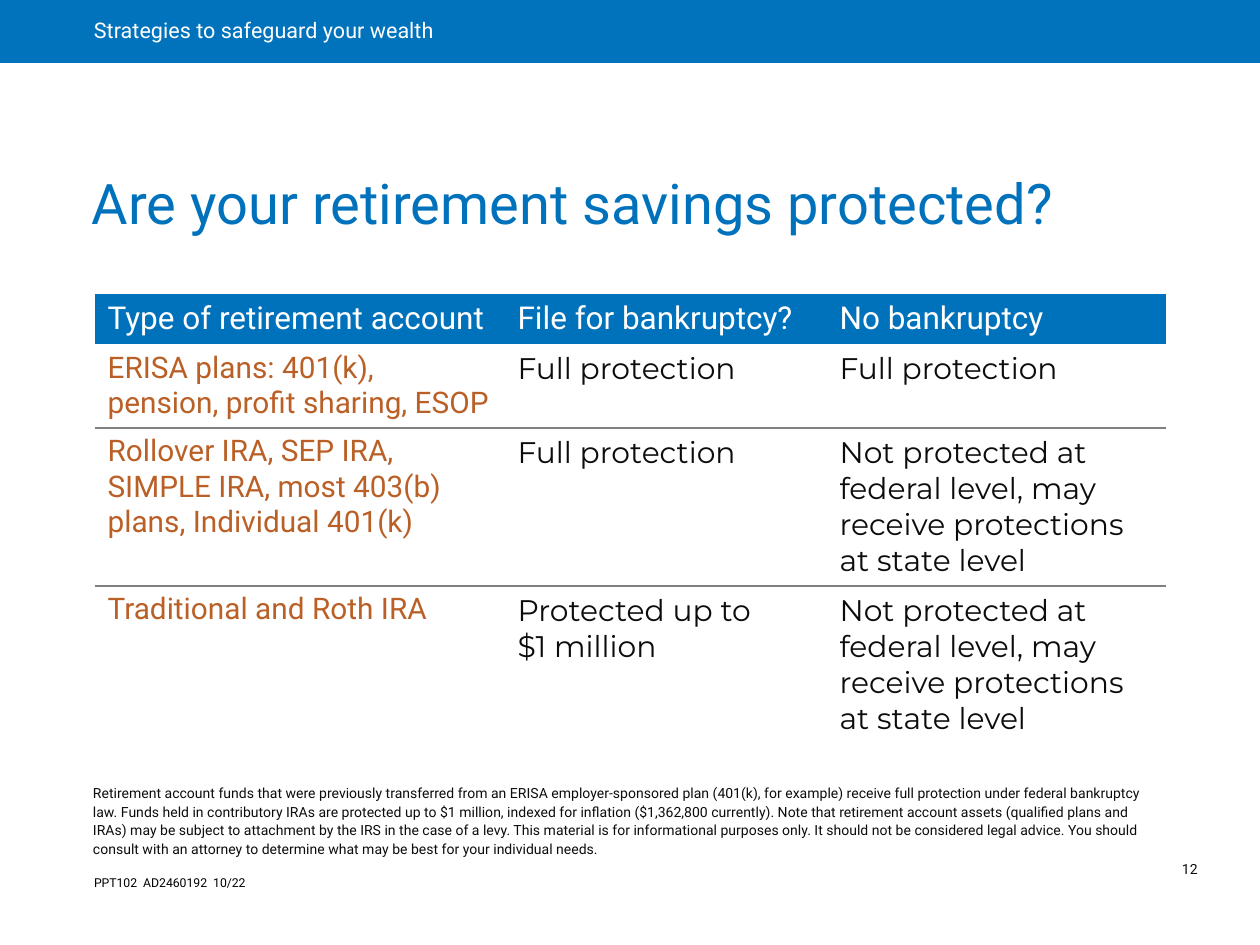
from dataclasses import dataclass

from lxml.etree import SubElement
from pptx import Presentation
from pptx.dml.color import RGBColor as Rgb
from pptx.enum.shapes import MSO_SHAPE as Kind
from pptx.enum.text import MSO_ANCHOR as Anchor, MSO_AUTO_SIZE as Fit, PP_ALIGN as Align
from pptx.oxml.ns import qn
from pptx.util import Pt

SCALE = 914400 / 126  # EMU in one px
HUES = {
    "band": "0073BC", "blue": "0072BC", "rust": "BA6027",
    "ink": "0C0C0C", "black": "000000", "white": "FFFFFF", "rule": "808080",
}


def px(n: int) -> int:
    return round(n * SCALE)


def hue(name: str) -> Rgb:
    return Rgb.from_string(HUES[name])


@dataclass
class Style:
    size: float
    color: str
    face: str = "Roboto"
    lead: float = 1.0


@dataclass
class Block:
    text: str
    box: tuple[int, int, int, int]
    pads: tuple[int, int, int, int]  # left, top, right, bottom
    anchor: Anchor
    style: Style


HEAD = Style(18, "white")
LABEL = Style(17, "rust")
BODY = Style(17, "ink", "Montserrat")

# Title and free text
TITLE = Block("Are your retirement savings protected?", (78, 207, 1086, 38),
              (14, 8, 14, 8), Anchor.BOTTOM, Style(32, "blue", lead=0.9))
BAND = Block("Strategies to safeguard your wealth", (0, 0, 1260, 63),
             (94, 0, 28, 0), Anchor.MIDDLE, Style(12.3, "white", lead=0.9))
NOTES = [
    Block("Retirement account funds that were previously transferred from an ERISA "
          "employer-sponsored plan (401(k), for example) receive full protection under "
          "federal bankruptcy law. Funds held in contributory IRAs are protected up to "
          "$1 million, indexed for inflation ($1,362,800 currently). Note that retirement "
          "account assets (qualified plans and IRAs) may be subject to attachment by the "
          "IRS in the case of a levy. This material is for informational purposes only. "
          "It should not be considered legal advice. You should consult with an attorney "
          "to determine what may be best for your individual needs.",
          (79, 837, 1086, 28), (14, 8, 14, 8), Anchor.BOTTOM, Style(8, "ink", lead=1.1)),
    Block("PPT102  AD2460192  10/22", (82, 854, 961, 57),
          (12, 6, 12, 6), Anchor.MIDDLE, Style(7, "black")),
    Block("12", (1166, 857, 63, 26), (16, 5, 5, 5), Anchor.TOP, Style(8, "ink", lead=0.9)),
]

# Table content
COLS = [410, 322, 339]
ROWS = [50, 84, 158, 158]
STATE = "Not protected at \nfederal level, may receive protections \nat state level"
CELLS = [
    ["Type of retirement account", "File for bankruptcy?", "No bankruptcy"],
    ["ERISA plans: 401(k), pension, profit sharing, ESOP", "Full protection", "Full protection"],
    ["Rollover IRA, SEP IRA, SIMPLE IRA, most 403(b) plans, Individual 401(k)",
     "Full protection", STATE],
    ["Traditional and Roth IRA", "Protected up to \n$1 million", STATE],
]


def write(frame, text: str, style: Style) -> None:
    para = frame.paragraphs[0]
    para.text = text.replace("\n", "\v")
    para.alignment = Align.LEFT
    para.line_spacing = style.lead
    for run in para.runs:
        for key, value in {"size": Pt(style.size), "name": style.face}.items():
            setattr(run.font, key, value)
        run.font.color.rgb = hue(style.color)


def fill_text(shape, block: Block) -> None:
    frame = shape.text_frame
    left, top, right, bottom = map(px, block.pads)
    form = {
        "word_wrap": True, "auto_size": Fit.NONE, "vertical_anchor": block.anchor,
        "margin_left": left, "margin_top": top,
        "margin_right": right, "margin_bottom": bottom,
    }
    for key, value in form.items():
        setattr(frame, key, value)
    write(frame, block.text, block.style)


def edge(cell, side: str, shown: bool) -> None:
    line = SubElement(cell._tc.get_or_add_tcPr(), qn(f"a:ln{side}"), w=str(Pt(1)))
    if shown:
        solid = SubElement(line, qn("a:solidFill"))
        SubElement(solid, qn("a:srgbClr"), val=HUES["rule"])
    else:
        SubElement(line, qn("a:noFill"))


def draw_table(slide) -> None:
    box = map(px, (95, 294, sum(COLS), sum(ROWS)))
    table = slide.shapes.add_table(len(ROWS), len(COLS), *box).table
    table.first_row = table.horz_banding = False
    for col, width in zip(table.columns, COLS):
        col.width = px(width)
    for r, (row, height) in enumerate(zip(table.rows, ROWS)):
        row.height = px(height)
        for c, cell in enumerate(row.cells):
            # Rules run only between body rows
            shown = {"L": False, "R": False, "T": r > 1, "B": 0 < r < len(ROWS) - 1}
            for side, on in shown.items():
                edge(cell, side, on)
            if r == 0:
                cell.fill.solid()
                cell.fill.fore_color.rgb = hue("blue")
                cell.vertical_anchor = Anchor.BOTTOM
            else:
                cell.fill.background()
            style = HEAD if r == 0 else LABEL if c == 0 else BODY
            write(cell.text_frame, CELLS[r][c], style)


def main() -> None:
    deck = Presentation()
    deck.slide_width, deck.slide_height = px(1260), px(945)
    slide = deck.slides.add_slide(deck.slide_layouts[5])

    # Top band
    band = slide.shapes.add_shape(Kind.RECTANGLE, *map(px, BAND.box))
    band.shadow.inherit = False
    band.fill.solid()
    band.fill.fore_color.rgb = hue("band")
    band.line.fill.background()
    fill_text(band, BAND)

    # Title
    title = slide.shapes.title
    for key, value in zip(("left", "top", "width", "height"), TITLE.box):
        setattr(title, key, px(value))
    fill_text(title, TITLE)

    # Notes and page number
    for note in NOTES:
        fill_text(slide.shapes.add_textbox(*map(px, note.box)), note)

    draw_table(slide)
    deck.save("out.pptx")


if __name__ == "__main__":
    main()
